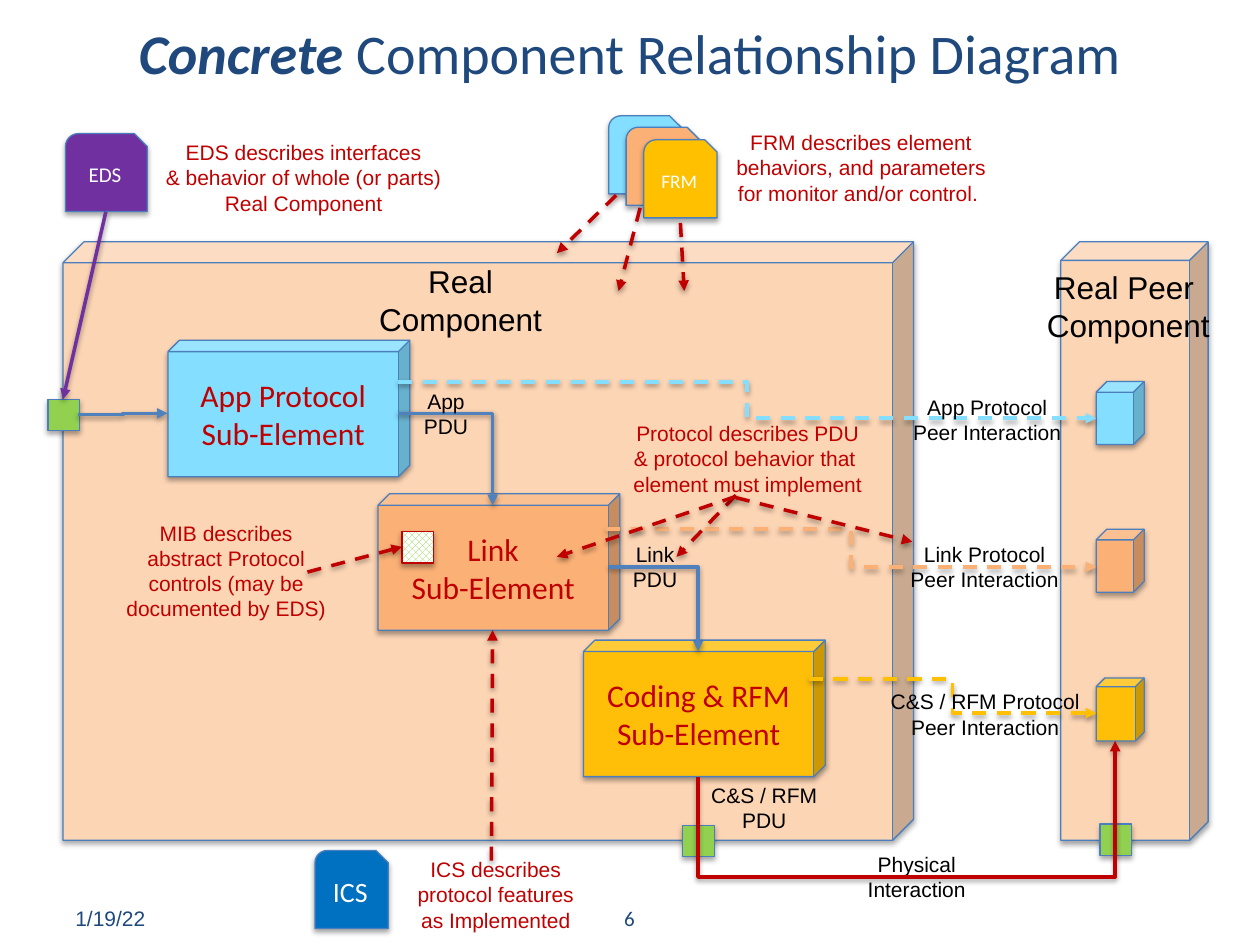
from lxml import etree
from pptx import Presentation
from pptx.dml.color import RGBColor
from pptx.enum.dml import MSO_LINE, MSO_PATTERN
from pptx.enum.shapes import MSO_CONNECTOR, MSO_SHAPE
from pptx.enum.text import MSO_ANCHOR, MSO_AUTO_SIZE, PP_ALIGN
from pptx.oxml.ns import qn
from pptx.util import Pt

CUBE, SQUARE, CARD = MSO_SHAPE.CUBE, MSO_SHAPE.RECTANGLE, MSO_SHAPE.SNIP_ROUND_RECTANGLE
STRAIGHT, ELBOW = MSO_CONNECTOR.STRAIGHT, MSO_CONNECTOR.ELBOW
DASH, DIAMONDS = MSO_LINE.DASH, MSO_PATTERN.SOLID_DIAMOND
CENTER, LEFT = PP_ALIGN.CENTER, PP_ALIGN.LEFT
TOP, MIDDLE = MSO_ANCHOR.TOP, MSO_ANCHOR.MIDDLE
GROW, FIXED = MSO_AUTO_SIZE.SHAPE_TO_FIT_TEXT, MSO_AUTO_SIZE.NONE

BLACK, WHITE, RED, NAVY = "000000", "FFFFFF", "C00000", "1F497D"
OUTLINE, BLUE, PURPLE = "4B7EBC", "4F81BD", "7030A0"
PEACH, GREEN, ICS_BLUE = "FCD5B5", "92D050", "0070C0"
SKY, ORANGE, GOLD, AMBER = "83DEFF", "FBB176", "FFC000", "FFBF08"


def color(hex_string):
    """Turn a hex string into a colour."""
    return RGBColor.from_string(hex_string)


def add_shadow(element, distance, opacity):
    """Give a shape or connector element a soft shadow straight below it."""
    effects = etree.SubElement(element.spPr, qn("a:effectLst"))
    shadow = etree.SubElement(effects, qn("a:outerShdw"), blurRad=str(Pt(3.1)),
                              dist=str(Pt(distance)), dir="5400000", rotWithShape="0")
    shade = etree.SubElement(shadow, qn("a:srgbClr"), val=BLACK)
    etree.SubElement(shade, qn("a:alpha"), val=str(opacity * 1000))


def add_span(para, text, size, font, hue, bold=False, italic=False):
    """Add one formatted run to a paragraph."""
    span = para.add_run()
    span.text = text
    span.font.size, span.font.name = Pt(size), font
    span.font.bold, span.font.italic = bold, italic
    span.font.color.rgb = color(hue)


def write_lines(frame, text, size, font, hue, align=CENTER):
    """Write each line of the text as its own paragraph."""
    for index, line in enumerate(text.split("\n")):
        para = frame.paragraphs[0] if index == 0 else frame.add_paragraph()
        para.alignment = align
        add_span(para, line, size, font, hue)


def add_box(page, bounds, anchor=TOP, wrap=False, fit=GROW):
    """Add an empty text box and return its text frame."""
    frame = page.shapes.add_textbox(*map(Pt, bounds)).text_frame
    frame.word_wrap, frame.auto_size, frame.vertical_anchor = wrap, fit, anchor
    return frame


def add_label(page, bounds, text, hue=BLACK, size=12, wrap=False):
    """Add a centred Arial label."""
    write_lines(add_box(page, bounds, wrap=wrap), text, size, "Arial", hue)


def add_block(page, kind, bounds, fill, depth=None, outline=OUTLINE):
    """Add a filled, outlined shape with a shadow."""
    block = page.shapes.add_shape(kind, *map(Pt, bounds))
    if depth is not None:
        block.adjustments[0] = depth
    block.fill.solid()
    block.fill.fore_color.rgb = color(fill)
    block.line.color.rgb = color(outline)
    block.line.width = Pt(0.75)
    add_shadow(block._element, 1.8, 35)
    return block


def add_text_block(page, kind, bounds, fill, text, size, hue=WHITE, depth=None):
    """Add a block with centred Calibri text."""
    frame = add_block(page, kind, bounds, fill, depth).text_frame
    frame.word_wrap, frame.vertical_anchor = True, MIDDLE
    write_lines(frame, text, size, "Calibri", hue)


def add_port(page, left, top):
    """Add a small green port square."""
    add_block(page, SQUARE, (left, top, 18, 18), GREEN)


def add_arrow(page, start, end, hue, dashed=False, kind=STRAIGHT):
    """Add a connector that ends in an arrowhead."""
    arrow = page.shapes.add_connector(kind, *map(Pt, start + end))
    arrow.line.color.rgb = color(hue)
    arrow.line.width = Pt(2)
    if dashed:
        arrow.line.dash_style = DASH
    properties = arrow._element.spPr
    etree.SubElement(properties.find(qn("a:ln")), qn("a:tailEnd"), type="triangle")
    add_shadow(arrow._element, 1.6, 38)
    return properties


def add_corner_arrow(page, start, end):
    """Add an arrow that runs right and then down."""
    properties = add_arrow(page, start, end, BLUE, kind=ELBOW)
    properties.find(qn("a:prstGeom")).set("prst", "bentConnector2")


def add_physical_link(page):
    """Add the arrow that runs below both components."""
    properties = add_arrow(page, (528.5, 553), (507.6, 314.6), RED, kind=ELBOW)
    properties.find(qn("a:xfrm")).set("rot", "5400000")
    guides = properties.find(qn("a:prstGeom")).get_or_add_avLst()
    etree.SubElement(guides, qn("a:gd"), name="adj1", fmla="val -272700")


def add_title(page):
    """Add the two-style heading."""
    para = add_box(page, (36, -5.8, 648, 71.3), MIDDLE, True, FIXED).paragraphs[0]
    para.alignment = CENTER
    add_span(para, "Concrete", 32, "Calibri", NAVY, True, True)
    add_span(para, " Component Relationship Diagram", 32, "Calibri", NAVY)


def add_components(page):
    """Add both outer components, the three layers and their links."""
    add_block(page, CUBE, (36, 138.2, 486, 342), PEACH, 0.035)
    add_block(page, CUBE, (606.2, 138.2, 84.2, 342), PEACH, 0.126)
    add_label(page, (208.8, 146.2, 108.7, 51.1), "Real\nComponent", size=18)
    add_label(page, (590.4, 149.8, 108.7, 51.1), "Real Peer \nComponent", size=18)
    layers = [
        ("Coding & RFM", AMBER, (333.4, 365.8), 387.4, 0.184),
        ("Link", ORANGE, (216, 282.2), 302.4, 0.224),
        ("App Protocol", SKY, (96, 194.4), 218, 0.224),
    ]
    for name, fill, corner, peer_top, peer_depth in layers:
        add_text_block(page, CUBE, corner + (138.2, 78), fill,
                       name + "\nSub-Element", 18, RED, 0.084)
        add_block(page, CUBE, (626.4, peer_top, 27.4, 36), fill, peer_depth)
    add_corner_arrow(page, (227.5, 236.2), (281.5, 288.7))
    add_corner_arrow(page, (347.8, 324), (398.9, 372.2))
    for start, end_top, hue in [((227.5, 218.2), 239, SKY), ((346.3, 302.4), 324, ORANGE),
                                ((462.2, 388.1), 407.5, GOLD)]:
        add_arrow(page, start, (626.4, end_top), hue, True, ELBOW)


def add_labels(page):
    """Add the black labels of the links."""
    for bounds, text in [
        ((514.1, 221.8, 100.1, 36), "App Protocol\nPeer Interaction"),
        ((512.6, 306, 100.1, 36), "Link Protocol\nPeer Interaction"),
        ((501.1, 390.2, 123.8, 36), "C&S / RFM Protocol\nPeer Interaction"),
        ((488.2, 483.1, 71.3, 36), "Physical\nInteraction"),
        ((234.7, 218.2, 40.3, 36), "App\nPDU"),
        ((354.2, 306, 40.3, 36), "Link\nPDU"),
        ((398.9, 443.5, 75.6, 36), "C&S / RFM\nPDU"),
    ]:
        add_label(page, bounds, text)


def add_notes(page):
    """Add the red explanations, the document cards and their arrows."""
    for bounds, text, wrap in [
        ((87.1, 76.3, 172.8, 51.1),
         "EDS describes interfaces\n& behavior of whole (or parts)\nReal Component", False),
        ((352.8, 236.9, 149, 51.1),
         "Protocol describes PDU\n& protocol behavior that \nelement must implement", False),
        ((64.8, 293.8, 128.9, 65.5),
         "MIB describes abstract Protocol controls (may be documented by EDS)", True),
        ((231.1, 486, 104.4, 51.1),
         "ICS describes\nprotocol features\nas Implemented", False),
        ((408.2, 70.6, 167.8, 51.1),
         "FRM describes element behaviors, and parameters for monitor and/or control. ", True),
    ]:
        add_label(page, bounds, text, RED, wrap=wrap)
    controls = add_block(page, SQUARE, (229.7, 303.8, 18, 18), WHITE, outline=RED)
    controls.fill.patterned()
    controls.fill.pattern = DIAMONDS
    controls.fill.fore_color.rgb, controls.fill.back_color.rgb = color(GREEN), color(WHITE)
    for bounds, fill, text, size in [
        ((180, 486, 41.8, 44.6), ICS_BLUE, "ICS", 16),
        ((347.8, 66.2, 41.8, 44.6), SKY, "FRM", 11),
        ((357.8, 72.7, 41.8, 44.6), ORANGE, "FRM", 11),
        ((367.9, 79.9, 41.8, 44.6), GOLD, "FRM", 11),
        ((37.4, 76.3, 46.8, 44.6), PURPLE, "EDS", 12),
    ]:
        add_text_block(page, CARD, bounds, fill, text, size)
    for start, end in [
        ((420.5, 283), (386.6, 318.2)), ((420.5, 283.7), (318.2, 318.2)),
        ((420.5, 284.4), (521.3, 309.6)), ((175.7, 326.9), (229.7, 312.5)),
        ((280.8, 491.8), (281.5, 360)), ((388.8, 127.4), (391, 166.3)),
        ((365.8, 118.8), (353.5, 166.3)), ((352.1, 111.6), (318.2, 144.7)),
    ]:
        add_arrow(page, start, end, RED, True)


def add_footer(page):
    """Add the date and the page number."""
    for left, text, font, align in [(36, "1/19/22", "Arial", LEFT), (275.8, "6", "Calibri", CENTER)]:
        frame = add_box(page, (left, 514.8, 167.8, 20.2), MIDDLE, True, FIXED)
        write_lines(frame, text, 12, font, NAVY, align)


def main():
    """Build the slide and save it."""
    deck = Presentation()
    deck.slide_width, deck.slide_height = Pt(720), Pt(540)
    page = deck.slides.add_slide(deck.slide_layouts[6])
    add_title(page)
    add_components(page)
    add_labels(page)
    for left, top in [(27.4, 228.2), (628.6, 470.9), (390.2, 471.6)]:
        add_port(page, left, top)
    add_notes(page)
    add_arrow(page, (44.6, 236.9), (95.8, 236.2), BLUE, kind=ELBOW)
    add_physical_link(page)
    add_arrow(page, (60.5, 121), (36, 228.2), PURPLE)
    add_footer(page)
    deck.save("out.pptx")


if __name__ == "__main__":
    main()
